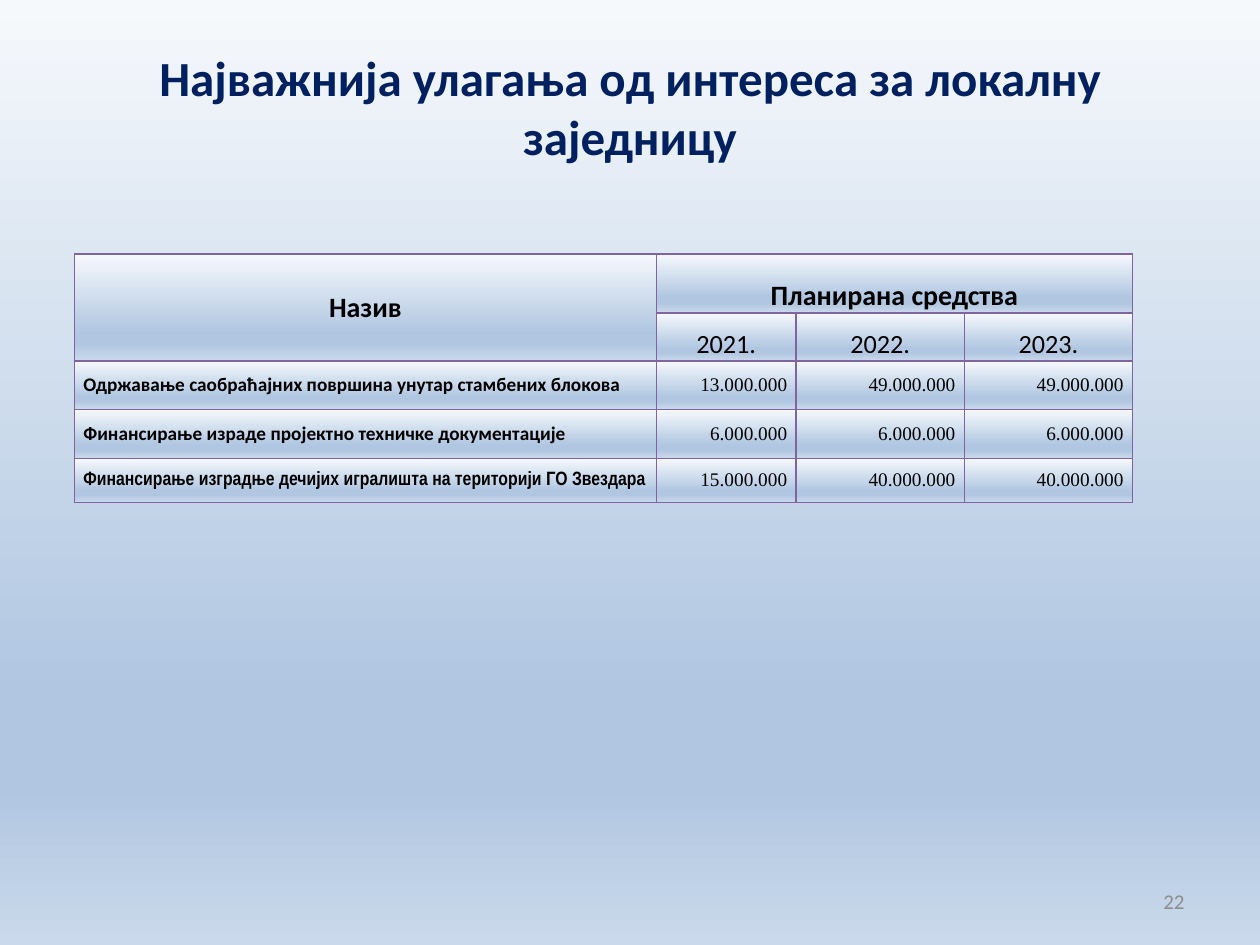
import pptx
import pptx.dml.color
import pptx.enum.text
import pptx.oxml.ns
import pptx.util
from lxml import etree

Cm, Pt = pptx.util.Cm, pptx.util.Pt
qn = pptx.oxml.ns.qn
ALIGN = pptx.enum.text.PP_ALIGN
ANCHOR = pptx.enum.text.MSO_ANCHOR

STOPS = ((0, "F6F9FC"), (74, "B0C6E1"), (83, "B0C6E1"), (100, "CAD9EB"))
COLS = (11.73, 2.82, 3.39, 3.39)
ROWS = (1.19, 0.97, 0.97, 0.99, 0.89)
HEAD = (
    ("Назив", "Планирана средства", "", ""),
    ("", "2021.", "2022.", "2023."),
)
ITEMS = (
    ("Одржавање caoбраћајних површина унутар стамбених блокова",
     "13.000.000", "49.000.000", "49.000.000"),
    ("Финансирање израде пројектно техничке документације",
     "6.000.000", "6.000.000", "6.000.000"),
    ("Финансирање изградње дечијих игралишта на територији ГО Звездара",
     "15.000.000", "40.000.000", "40.000.000"),
)


def rgb(color):
    """Return a colour object for a hex string."""
    return pptx.dml.color.RGBColor.from_string(color)


def set_gradient(fill, element):
    """Give the fill held in the element the vertical blue gradient."""
    fill.gradient()
    fill.gradient_angle = 270
    stops = next(element.iter(qn("a:gsLst")))
    for gs in list(stops):
        stops.remove(gs)
    for pos, color in STOPS:
        gs = etree.SubElement(stops, qn("a:gs"), pos=str(pos * 1000))
        etree.SubElement(gs, qn("a:srgbClr"), val=color)


def set_borders(cell, color, width):
    """Draw all four borders of a cell."""
    props = cell._tc.get_or_add_tcPr()
    for side in ("lnL", "lnR", "lnT", "lnB"):
        ln = etree.SubElement(props, qn("a:" + side), w=str(Pt(width)))
        solid = etree.SubElement(ln, qn("a:solidFill"))
        etree.SubElement(solid, qn("a:srgbClr"), val=color)


def set_text(tf, text, size, align, color="000000", bold=False, name="Calibri"):
    """Write one formatted paragraph into a text frame."""
    p = tf.paragraphs[0]
    p.text = text
    p.alignment = align
    p.font.size = Pt(size)
    p.font.name = name
    p.font.bold = bold
    p.font.color.rgb = rgb(color)


def add_text(s, box, text, size, align, color, bold=False):
    """Add a wrapped, vertically centred text box."""
    tf = s.shapes.add_textbox(*map(Cm, box)).text_frame
    tf.word_wrap = True
    tf.vertical_anchor = ANCHOR.MIDDLE
    set_text(tf, text, size, align, color, bold)


def set_cell(cell, text, anchor, *args, **kwargs):
    """Format one table cell and write its text."""
    cell.margin_left = cell.margin_right = Cm(0.18)
    cell.margin_top = cell.margin_bottom = 0
    cell.vertical_anchor = anchor
    set_borders(cell, "8064A2", 1)
    set_gradient(cell.fill, cell._tc.tcPr)
    set_text(cell.text_frame, text, *args, **kwargs)


def add_investments(s, left, top):
    """Add the table of planned funds at the given corner."""
    table = s.shapes.add_table(
        len(ROWS), len(COLS), Cm(left), Cm(top), Cm(sum(COLS)), Cm(sum(ROWS))
    ).table
    for col, width in zip(table.columns, COLS):
        col.width = Cm(width)
    for row, height in zip(table.rows, ROWS):
        row.height = Cm(height)
    for i, texts in enumerate(HEAD):
        for j, text in enumerate(texts):
            anchor = ANCHOR.BOTTOM if j else ANCHOR.MIDDLE
            set_cell(table.cell(i, j), text, anchor, 15 if i else 16,
                     ALIGN.CENTER, bold=i == 0)
    for i, texts in enumerate(ITEMS, len(HEAD)):
        label = "Arial Narrow" if i == len(ROWS) - 1 else "Calibri"
        for j, text in enumerate(texts):
            set_cell(table.cell(i, j), text, ANCHOR.MIDDLE, 11,
                     ALIGN.RIGHT if j else ALIGN.LEFT, bold=j == 0,
                     name="Times New Roman" if j else label)
    table.cell(0, 0).merge(table.cell(1, 0))
    table.cell(0, 1).merge(table.cell(0, 3))


def main():
    """Build the slide and save it."""
    prs = pptx.Presentation()
    prs.slide_width, prs.slide_height = Cm(25.4), Cm(19.05)
    s = prs.slides.add_slide(prs.slide_layouts[6])
    set_gradient(s.background.fill, s.element)
    add_text(s, (1.27, 0.76, 22.86, 2.77),
             "Најважнија улагања од интереса за локалну заједницу",
             28, ALIGN.CENTER, "002060", True)
    add_investments(s, 1.5, 5.12)
    add_text(s, (18.2, 17.66, 5.93, 1.01), "22", 12, ALIGN.RIGHT, "8C8C8C")
    prs.save("out.pptx")


if __name__ == "__main__":
    main()
